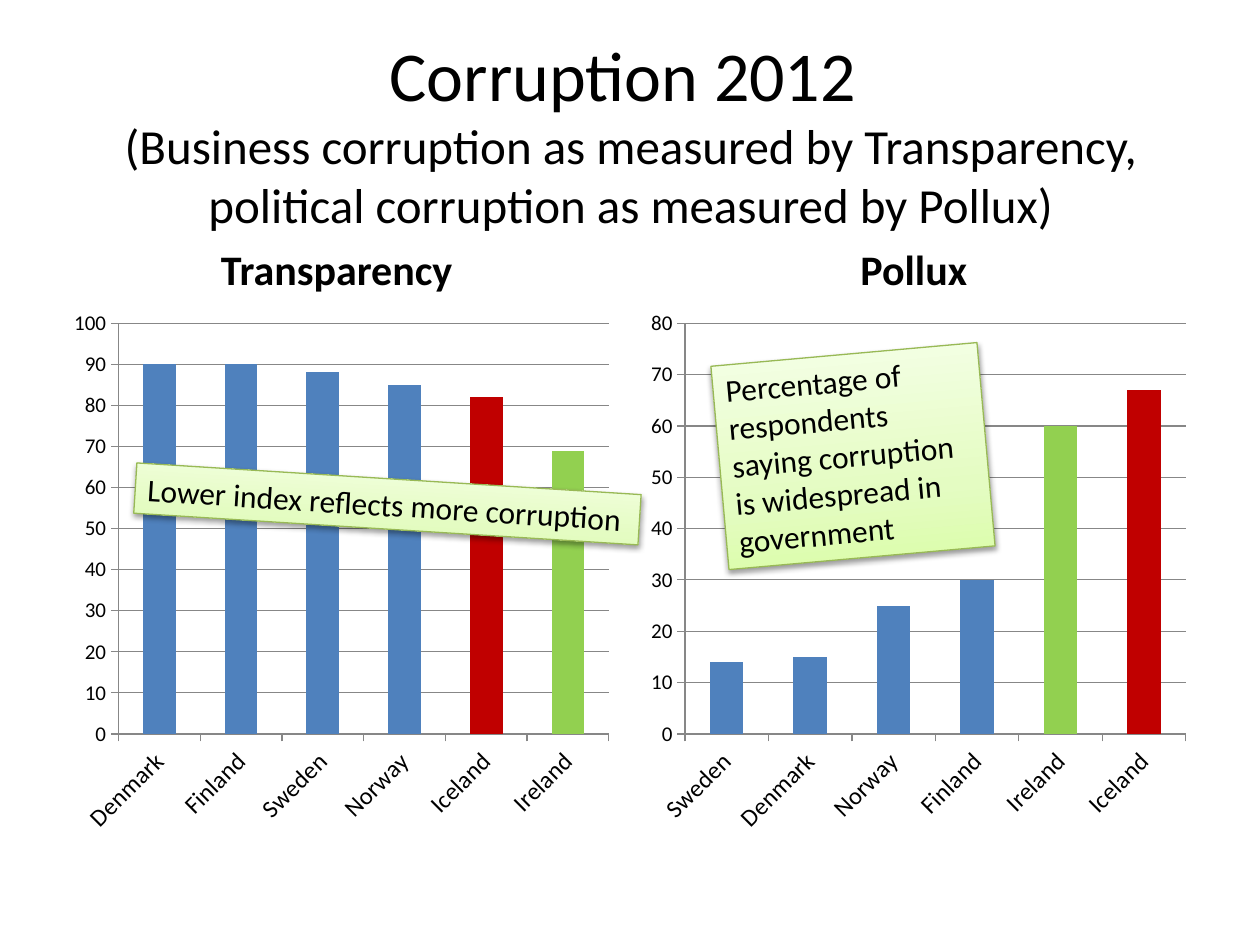
from lxml.etree import SubElement
from pptx import Presentation
from pptx.chart.data import CategoryChartData
from pptx.dml.color import RGBColor
from pptx.enum.chart import XL_CHART_TYPE, XL_TICK_MARK
from pptx.enum.shapes import MSO_SHAPE
from pptx.enum.text import MSO_ANCHOR, MSO_AUTO_SIZE, PP_ALIGN
from pptx.oxml import parse_xml
from pptx.oxml.ns import nsdecls, qn
from pptx.util import Inches, Pt

FONT = "Calibri"
COLORS = {
    "text": "000000", "bar": "4F81BD", "Iceland": "C00000", "Ireland": "92D050",
    "axis": "878787", "note_line": "98B955",
    "note_dark": "DAFDA7", "note_mid": "E4FCC2", "note_light": "F5FFE7",
}
NOTE_STOPS = ((0, "note_dark"), (35, "note_mid"), (100, "note_light"))
COLUMN_LEFTS = (0.5, 5.08)
COLUMN_WIDTH = 4.42


def rgb(name):
    return RGBColor.from_string(COLORS[name])


def set_font(font, size, **values):
    for name, value in {"name": FONT, "size": Pt(size), **values}.items():
        setattr(font, name, value)
    font.color.rgb = rgb("text")


def add_run(p, text, size, **values):
    r = p.add_run()
    r.text = text
    set_font(r.font, size, **values)


def add_text(slide, box, anchor):
    """Add a centred text box and return its text frame."""
    tf = slide.shapes.add_textbox(*map(Inches, box)).text_frame
    tf.word_wrap = True
    tf.vertical_anchor = anchor
    tf.paragraphs[0].alignment = PP_ALIGN.CENTER
    return tf


def add_title(slide):
    tf = add_text(slide, (0.28, 0.44, 9.45, 1.57), MSO_ANCHOR.MIDDLE)
    tf.margin_bottom = Inches(0.4)
    p = tf.paragraphs[0]
    add_run(p, "Corruption 2012 ", 40)
    p.add_line_break()
    add_run(p, "(Business corruption as measured by Transparency, "
               "political corruption as measured by Pollux)", 28)


def add_heading(slide, left, text):
    tf = add_text(slide, (left, 1.68, COLUMN_WIDTH, 0.7), MSO_ANCHOR.BOTTOM)
    add_run(tf.paragraphs[0], text, 24, bold=True)


def style_axis(axis, size):
    axis.major_tick_mark = XL_TICK_MARK.OUTSIDE
    axis.minor_tick_mark = XL_TICK_MARK.NONE
    set_font(axis.tick_labels.font, size)
    axis.format.line.color.rgb = rgb("axis")
    axis.format.line.width = Pt(0.75)


def add_bar_chart(slide, left, values, maximum):
    data = CategoryChartData()
    data.categories = list(values)
    data.add_series("Series 1", list(values.values()))
    chart = slide.shapes.add_chart(
        XL_CHART_TYPE.COLUMN_CLUSTERED, Inches(left), Inches(2.38),
        Inches(COLUMN_WIDTH), Inches(4.32), data).chart
    chart.has_legend = chart.has_title = False
    set_font(chart.font, 18)

    style_axis(chart.category_axis, 14)
    body = chart.category_axis._element.find(qn("c:txPr")).find(qn("a:bodyPr"))
    body.set("rot", str(-45 * 60000))
    body.set("vert", "horz")
    axis = chart.value_axis
    style_axis(axis, 12)
    axis.minimum_scale, axis.maximum_scale, axis.major_unit = 0, maximum, 10
    axis.has_major_gridlines = True
    axis.major_gridlines.format.line.color.rgb = rgb("axis")
    axis.major_gridlines.format.line.width = Pt(0.75)

    plot = chart.plots[0]
    plot.gap_width = 150
    plot.vary_by_categories = False
    series = plot.series[0]
    series.invert_if_negative = False
    series.format.fill.solid()
    series.format.fill.fore_color.rgb = rgb("bar")
    for i, country in enumerate(values):
        if country in COLORS:
            fill = series.points[i].format.fill
            fill.solid()
            fill.fore_color.rgb = rgb(country)


def add_note_effects(sp):
    """Give a note its upward gradient and soft shadow below."""
    props = sp._element.spPr
    grad = parse_xml(f'<a:gradFill {nsdecls("a")} rotWithShape="1"/>')
    stops = SubElement(grad, qn("a:gsLst"))
    for pos, color in NOTE_STOPS:
        stop = SubElement(stops, qn("a:gs"), pos=str(pos * 1000))
        SubElement(stop, qn("a:srgbClr"), val=COLORS[color])
    SubElement(grad, qn("a:lin"), ang=str(270 * 60000), scaled="1")
    props.find(qn("a:prstGeom")).addnext(grad)

    shadow = SubElement(
        props.find(qn("a:effectLst")), qn("a:outerShdw"), blurRad=str(Pt(3.1)),
        dist=str(Pt(1.6)), dir=str(90 * 60000), rotWithShape="0")
    color = SubElement(shadow, qn("a:srgbClr"), val=COLORS["text"])
    SubElement(color, qn("a:alpha"), val="38000")


def add_note(slide, box, rotation, text, wrap):
    sp = slide.shapes.add_shape(MSO_SHAPE.RECTANGLE, *map(Inches, box))
    sp.rotation = rotation
    sp.shadow.inherit = False
    sp.line.color.rgb = rgb("note_line")
    sp.line.width = Pt(0.75)
    add_note_effects(sp)
    tf = sp.text_frame
    tf.word_wrap = wrap
    tf.auto_size = MSO_AUTO_SIZE.SHAPE_TO_FIT_TEXT
    tf.vertical_anchor = MSO_ANCHOR.TOP
    p = tf.paragraphs[0]
    p.alignment = PP_ALIGN.LEFT
    add_run(p, text, 18)


def main():
    prs = Presentation()
    prs.slide_width, prs.slide_height = Inches(10), Inches(7.5)
    slide = prs.slides.add_slide(prs.slide_layouts[6])
    add_title(slide)

    columns = (
        ("Transparency ", 100, {"Denmark": 90, "Finland": 90, "Sweden": 88,
                                "Norway": 85, "Iceland": 82, "Ireland": 69}),
        ("Pollux ", 80, {"Sweden": 14, "Denmark": 15, "Norway": 25,
                         "Finland": 30, "Ireland": 60, "Iceland": 67}),
    )
    for left, (heading, maximum, values) in zip(COLUMN_LEFTS, columns):
        add_heading(slide, left, heading)
        add_bar_chart(slide, left, values, maximum)

    add_note(slide, (1.07, 3.8, 4.01, 0.4), 3.6,
             "Lower index reflects more corruption", wrap=False)
    add_note(slide, (5.71, 2.81, 2.12, 1.62), 354.9,
             "Percentage of respondents saying corruption is widespread "
             "in government", wrap=True)
    prs.save("out.pptx")


if __name__ == "__main__":
    main()
